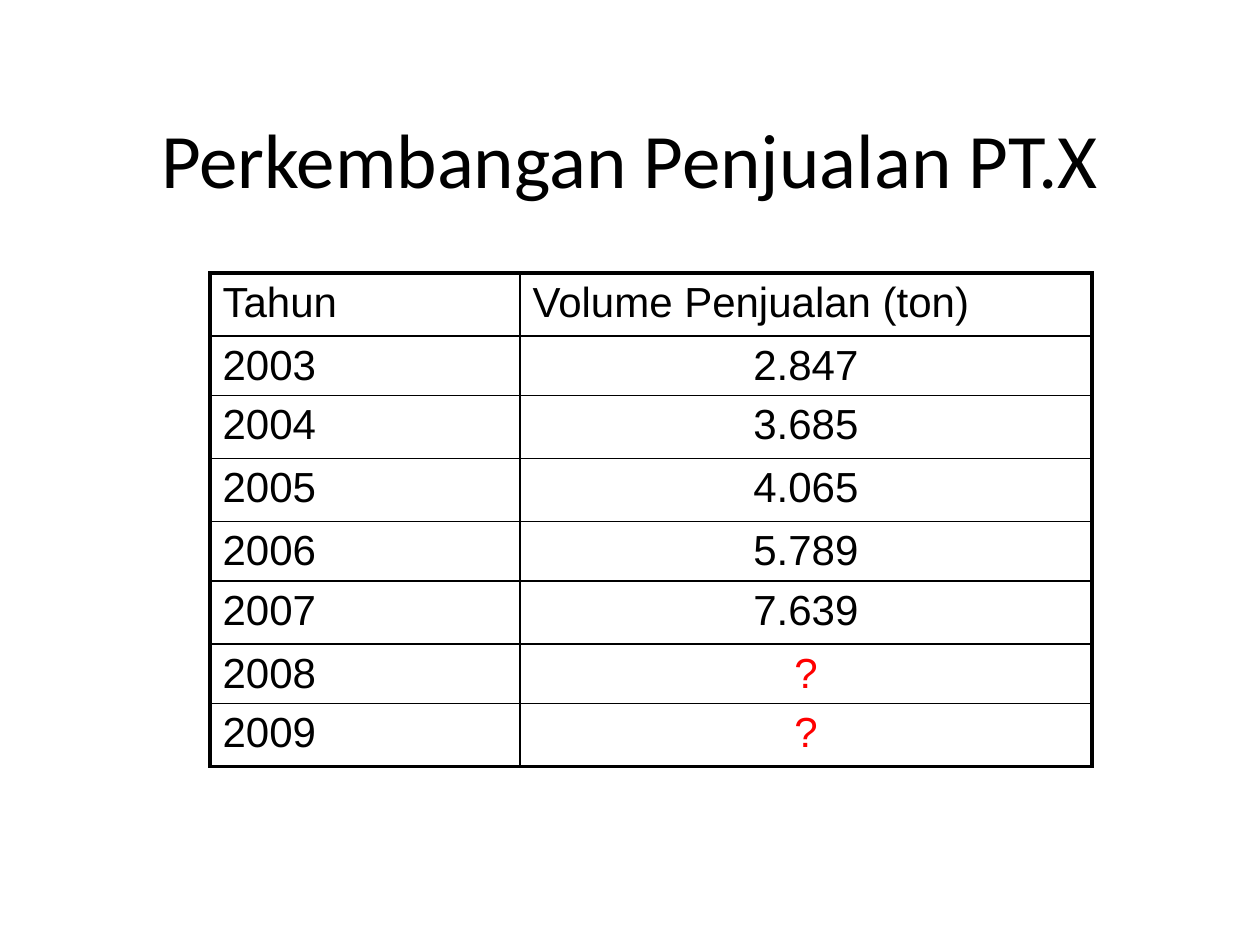
import pptx
import pptx.dml.color
import pptx.enum.text
import pptx.oxml
import pptx.oxml.ns
import pptx.util

SCALE = 914400 / 126
COLORS = {"ink": "000000", "unknown": "FF0000"}
THIN, THICK = 1, 2.25
COLUMN_WIDTHS = [310, 572]
ROW_HEIGHTS = [63, 53, 63, 63, 53, 63, 53, 63]
SALES = [
    ("Tahun", "Volume Penjualan (ton)"),
    ("2003", "2.847"),
    ("2004", "3.685"),
    ("2005", "4.065"),
    ("2006", "5.789"),
    ("2007", "7.639"),
    ("2008", "?"),
    ("2009", "?"),
]


def px(length):
    """Turn pixels into EMU."""
    return pptx.util.Emu(round(length * SCALE))


def format_paragraph(para, font_name, size, color, centred):
    """Set the font and alignment of a paragraph."""
    align = pptx.enum.text.PP_ALIGN
    para.alignment = align.CENTER if centred else align.LEFT
    para.font.name = font_name
    para.font.size = pptx.util.Pt(size)
    para.font.color.rgb = pptx.dml.color.RGBColor.from_string(COLORS[color])


def set_borders(cell, widths):
    """Draw the cell borders, given a width in points for each side."""
    properties = cell._tc.get_or_add_tcPr()
    for position, side in enumerate("LRTB"):
        line = pptx.oxml.parse_xml(
            f'<a:ln{side} {pptx.oxml.ns.nsdecls("a")} w="{pptx.util.Pt(widths[side])}">'
            f'<a:solidFill><a:srgbClr val="{COLORS["ink"]}"/></a:solidFill></a:ln{side}>'
        )
        properties.insert(position, line)


def add_title(page, text):
    """Place and format the slide title."""
    title = page.shapes.title
    title.left, title.top, title.width, title.height = map(px, (63, 63, 1134, 189))
    title.text_frame.text = text
    title.text_frame.vertical_anchor = pptx.enum.text.MSO_ANCHOR.MIDDLE
    format_paragraph(title.text_frame.paragraphs[0], "Calibri", 44, "ink", True)


def add_sales_table(page):
    """Add the table of yearly sales with a thick outer frame."""
    last_row, last_column = len(SALES) - 1, len(COLUMN_WIDTHS) - 1
    frame = page.shapes.add_table(
        len(SALES), len(COLUMN_WIDTHS), px(210), px(273),
        px(sum(COLUMN_WIDTHS)), px(sum(ROW_HEIGHTS)),
    )
    table = frame.table
    table.first_row = table.horz_banding = False
    for column, width in zip(table.columns, COLUMN_WIDTHS):
        column.width = px(width)
    for row, height in zip(table.rows, ROW_HEIGHTS):
        row.height = px(height)
    for i, record in enumerate(SALES):
        for j, text in enumerate(record):
            cell = table.cell(i, j)
            cell.text = text
            cell.fill.background()
            color = "unknown" if text == "?" else "ink"
            para = cell.text_frame.paragraphs[0]
            format_paragraph(para, "Arial", 24, color, i > 0 and j > 0)
            set_borders(cell, {
                "L": THICK if j == 0 else THIN,
                "R": THICK if j == last_column else THIN,
                "T": THICK if i == 0 else THIN,
                "B": THICK if i == last_row else THIN,
            })


def main():
    """Build the sales slide and save it."""
    deck = pptx.Presentation()
    deck.slide_width, deck.slide_height = px(1260), px(945)
    page = deck.slides.add_slide(deck.slide_layouts[5])
    add_title(page, "Perkembangan Penjualan PT.X")
    add_sales_table(page)
    deck.save("out.pptx")


if __name__ == "__main__":
    main()
